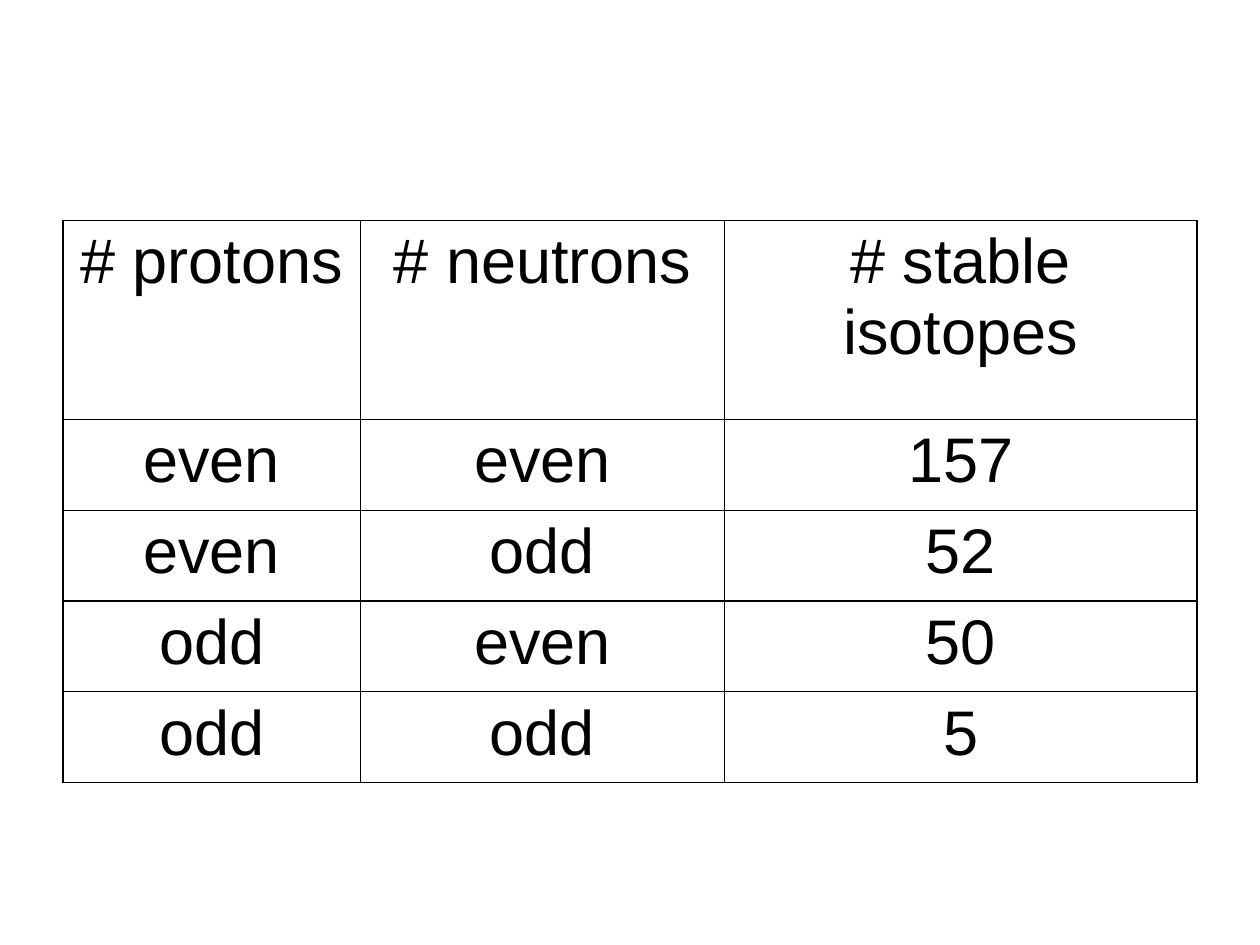
from typing import NamedTuple

from lxml.etree import SubElement
from pptx import Presentation
from pptx.dml.color import RGBColor
from pptx.enum.text import MSO_ANCHOR as Anchor, PP_ALIGN as Align
from pptx.oxml.ns import qn
from pptx.table import _Cell as Cell
from pptx.util import Emu, Pt

PX = 9144
BLACK = RGBColor(0, 0, 0)
WHITE = RGBColor(255, 255, 255)


class Parity(NamedTuple):
    protons: str
    neutrons: str
    isotopes: str


HEADER = Parity("# protons", "# neutrons", "# stable isotopes")
COUNTS = [
    Parity("even", "even", "157"),
    Parity("even", "odd", "52"),
    Parity("odd", "even", "50"),
    Parity("odd", "odd", "5"),
]
COLUMN_WIDTHS = (236, 289, 375)
HEADER_HEIGHT = 158
COUNT_HEIGHT = 72


def px(length: int) -> Emu:
    return Emu(length * PX)


def write(cell: Cell, text: str, *, size: int = 36, font: str = "Arial",
          color: RGBColor = BLACK, align: Align = Align.CENTER) -> None:
    paragraph = cell.text_frame.paragraphs[0]
    paragraph.alignment = align
    run = paragraph.add_run()
    run.text = text
    run.font.size = Pt(size)
    run.font.name = font
    run.font.color.rgb = color


def draw_borders(cell: Cell, *, color: RGBColor = BLACK, width: int = 1) -> None:
    properties = cell._tc.get_or_add_tcPr()
    for side in ("a:lnL", "a:lnR", "a:lnT", "a:lnB"):
        border = SubElement(properties, qn(side), w=str(Pt(width)))
        fill = SubElement(border, qn("a:solidFill"))
        SubElement(fill, qn("a:srgbClr"), val=str(color))


def draw_cell(cell: Cell, text: str) -> None:
    cell.vertical_anchor = Anchor.TOP
    draw_borders(cell)
    cell.fill.solid()
    cell.fill.fore_color.rgb = WHITE
    write(cell, text)


def main() -> None:
    deck = Presentation()
    deck.slide_width, deck.slide_height = px(1000), px(750)
    slide = deck.slides.add_slide(deck.slide_layouts[6])

    parities = [HEADER, *COUNTS]
    row_heights = [HEADER_HEIGHT] + [COUNT_HEIGHT] * len(COUNTS)
    isotope_table = slide.shapes.add_table(
        len(parities), len(HEADER), px(50), px(175),
        px(sum(COLUMN_WIDTHS)), px(sum(row_heights))).table
    isotope_table.horz_banding = False

    for column, width in zip(isotope_table.columns, COLUMN_WIDTHS):
        column.width = px(width)
    for row, height, parity in zip(isotope_table.rows, row_heights, parities):
        row.height = px(height)
        for cell, text in zip(row.cells, parity):
            draw_cell(cell, text)
    isotope_table.first_row = False

    deck.save("out.pptx")


if __name__ == "__main__":
    main()
